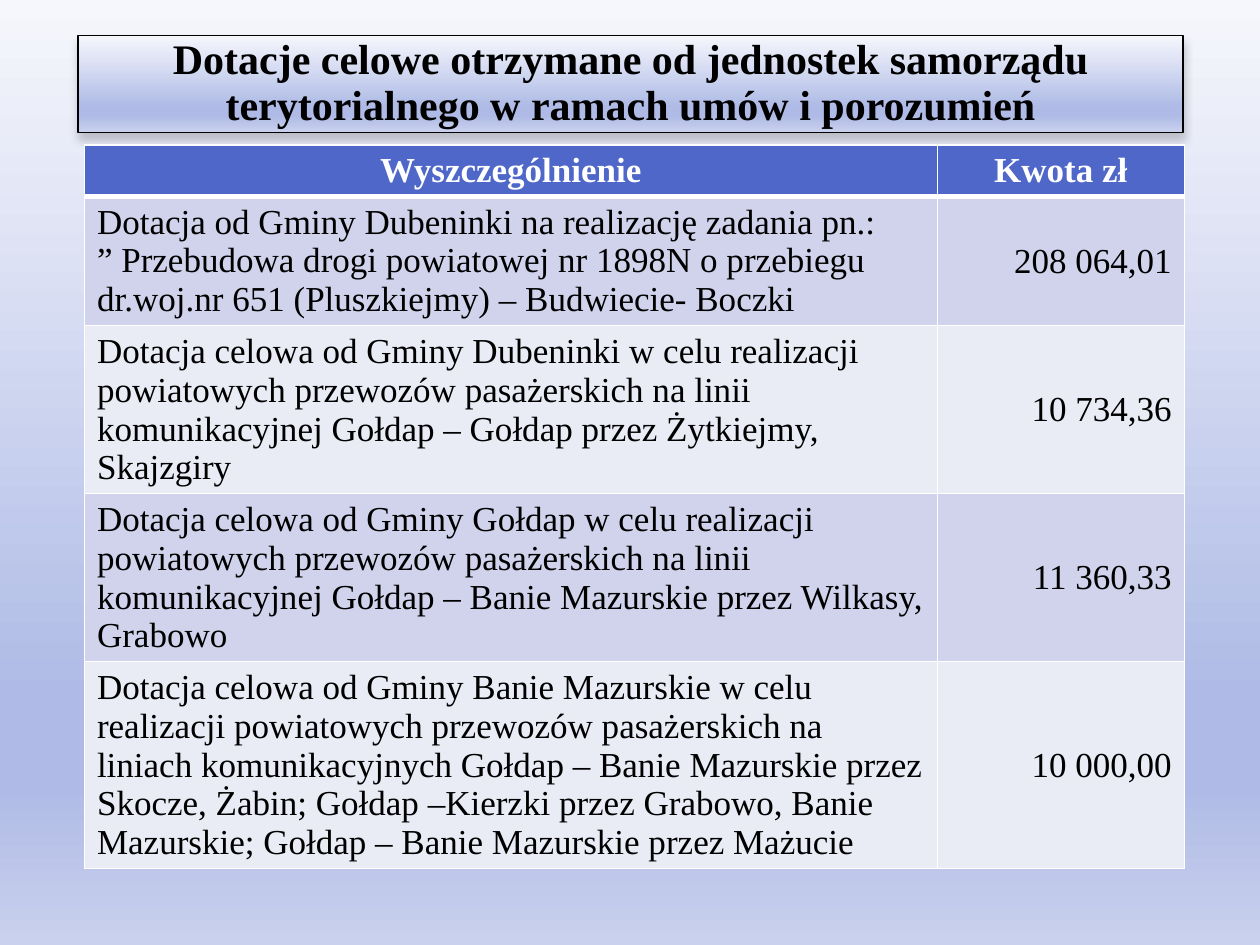
from lxml.etree import SubElement
from pptx import Presentation
from pptx.dml.color import RGBColor
from pptx.enum.text import MSO_ANCHOR, MSO_AUTO_SIZE, PP_ALIGN
from pptx.oxml.ns import qn
from pptx.util import Inches, Pt

BLACK = RGBColor(0x00, 0x00, 0x00)
WHITE = RGBColor(0xFF, 0xFF, 0xFF)
HEADER_BLUE = RGBColor(0x4E, 0x67, 0xC8)
BAND_DARK = RGBColor(0xD0, 0xD3, 0xEB)
BAND_LIGHT = RGBColor(0xE9, 0xEB, 0xF5)
PALE = RGBColor(0xF6, 0xF7, 0xFC)
LAVENDER = RGBColor(0xAF, 0xBB, 0xE6)
SOFT_BLUE = RGBColor(0xCA, 0xD1, 0xEE)
GRADIENT = [(0, PALE), (74, LAVENDER), (83, LAVENDER), (100, SOFT_BLUE)]

FONT = "Times New Roman"
TITLE_FONT = {"name": FONT, "size": Pt(24), "bold": True}
HEADER_FONT = {"name": FONT, "size": Pt(20), "bold": True}
BODY_FONT = {"name": FONT, "size": Pt(20), "bold": False}

TITLE = "Dotacje celowe otrzymane od jednostek samorządu terytorialnego w ramach umów i porozumień"
HEADINGS = ("Wyszczególnienie", "Kwota zł")
GRANTS = [
    ("Dotacja od Gminy Dubeninki na realizację zadania pn.:\v"
     "” Przebudowa drogi powiatowej nr 1898N o przebiegu dr.woj.nr 651 "
     "(Pluszkiejmy) – Budwiecie- Boczki", "208 064,01"),
    ("Dotacja celowa od Gminy Dubeninki w celu realizacji powiatowych przewozów "
     "pasażerskich na linii komunikacyjnej Gołdap – Gołdap przez Żytkiejmy, Skajzgiry",
     "10 734,36"),
    ("Dotacja celowa od Gminy Gołdap w celu realizacji powiatowych przewozów "
     "pasażerskich na linii komunikacyjnej Gołdap – Banie Mazurskie przez Wilkasy, Grabowo",
     "11 360,33"),
    ("Dotacja celowa od Gminy Banie Mazurskie w celu realizacji powiatowych przewozów "
     "pasażerskich na liniach komunikacyjnych Gołdap – Banie Mazurskie przez Skocze, Żabin; "
     "Gołdap –Kierzki przez Grabowo, Banie Mazurskie; Gołdap – Banie Mazurskie przez Mażucie",
     "10 000,00"),
]


def set_attributes(target, values):
    """Set each named attribute of the target."""
    for name, value in values.items():
        setattr(target, name, value)


def format_paragraph(paragraph, alignment, font, color):
    """Align a paragraph and format its text."""
    paragraph.alignment = alignment
    set_attributes(paragraph.font, font)
    paragraph.font.color.rgb = color


def add_color(parent, color):
    """Add an RGB colour element and return it."""
    return SubElement(parent, qn("a:srgbClr"), val=str(color))


def apply_gradient(fill, owner):
    """Fill with the vertical four-stop gradient."""
    fill.gradient()
    fill.gradient_angle = 270
    stops = next(owner.iter(qn("a:gsLst")))
    for stop in list(stops):
        stops.remove(stop)
    for position, color in GRADIENT:
        add_color(SubElement(stops, qn("a:gs"), pos=str(position * 1000)), color)


def add_shadow(shape):
    """Give a shape a soft shadow straight below it."""
    shape.shadow.inherit = False
    effects = next(shape.element.iter(qn("a:effectLst")))
    shadow = SubElement(effects, qn("a:outerShdw"), blurRad=str(Pt(5)), dist=str(Pt(4)),
                        dir="5400000", rotWithShape="0")
    SubElement(add_color(shadow, BLACK), qn("a:alpha"), val="20000")


def set_borders(cell, widths):
    """Draw white cell borders with the given widths in points."""
    properties = cell._tc.get_or_add_tcPr()
    for index, (side, width) in enumerate(widths.items()):
        line = SubElement(properties, qn(f"a:ln{side}"), w=str(Pt(width)))
        add_color(SubElement(line, qn("a:solidFill")), WHITE)
        properties.insert(index, line)


def place_title(slide, left, top, width, height):
    """Place the framed title in the given box."""
    title = slide.shapes.title
    set_attributes(title, {"left": left, "top": top, "width": width, "height": height})
    apply_gradient(title.fill, title.element)
    title.line.color.rgb = BLACK
    title.line.width = Pt(0.75)
    add_shadow(title)
    frame = title.text_frame
    frame.text = TITLE
    set_attributes(frame, {"word_wrap": True, "auto_size": MSO_AUTO_SIZE.NONE,
                           "vertical_anchor": MSO_ANCHOR.MIDDLE})
    for side in ("left", "top", "right", "bottom"):
        setattr(frame, f"margin_{side}", Inches(0.08))
    paragraph = frame.paragraphs[0]
    paragraph.line_spacing = 0.9
    format_paragraph(paragraph, PP_ALIGN.CENTER, TITLE_FONT, BLACK)


def place_table(slide, left, top, width, row_height):
    """Place the grants table in the given box."""
    rows = [HEADINGS, *GRANTS]
    table = slide.shapes.add_table(len(rows), 2, left, top, width, row_height * len(rows)).table
    amount_width = Inches(1.96)
    table.columns[0].width = width - amount_width
    table.columns[1].width = amount_width
    for row, texts in enumerate(rows):
        for column, text in enumerate(texts):
            cell = table.cell(row, column)
            cell.text_frame.text = text
            cell.fill.solid()
            paragraph = cell.text_frame.paragraphs[0]
            if row == 0:
                cell.fill.fore_color.rgb = HEADER_BLUE
                format_paragraph(paragraph, PP_ALIGN.CENTER, HEADER_FONT, WHITE)
            else:
                cell.fill.fore_color.rgb = BAND_DARK if row % 2 else BAND_LIGHT
                alignment = PP_ALIGN.RIGHT if column else PP_ALIGN.LEFT
                format_paragraph(paragraph, alignment, BODY_FONT, BLACK)
                if column:
                    cell.vertical_anchor = MSO_ANCHOR.MIDDLE
            set_borders(cell, {"L": 1, "R": 1, "T": 3 if row == 1 else 1,
                               "B": 3 if row == 0 else 1})


def main():
    """Build and save the presentation."""
    presentation = Presentation()
    presentation.slide_width = Inches(10)
    presentation.slide_height = Inches(7.5)
    slide = presentation.slides.add_slide(presentation.slide_layouts[5])
    apply_gradient(slide.background.fill, slide.element)
    place_title(slide, Inches(0.62), Inches(0.28), Inches(8.77), Inches(0.77))
    place_table(slide, Inches(0.67), Inches(1.15), Inches(8.73), Inches(0.41))
    presentation.save("out.pptx")


if __name__ == "__main__":
    main()
